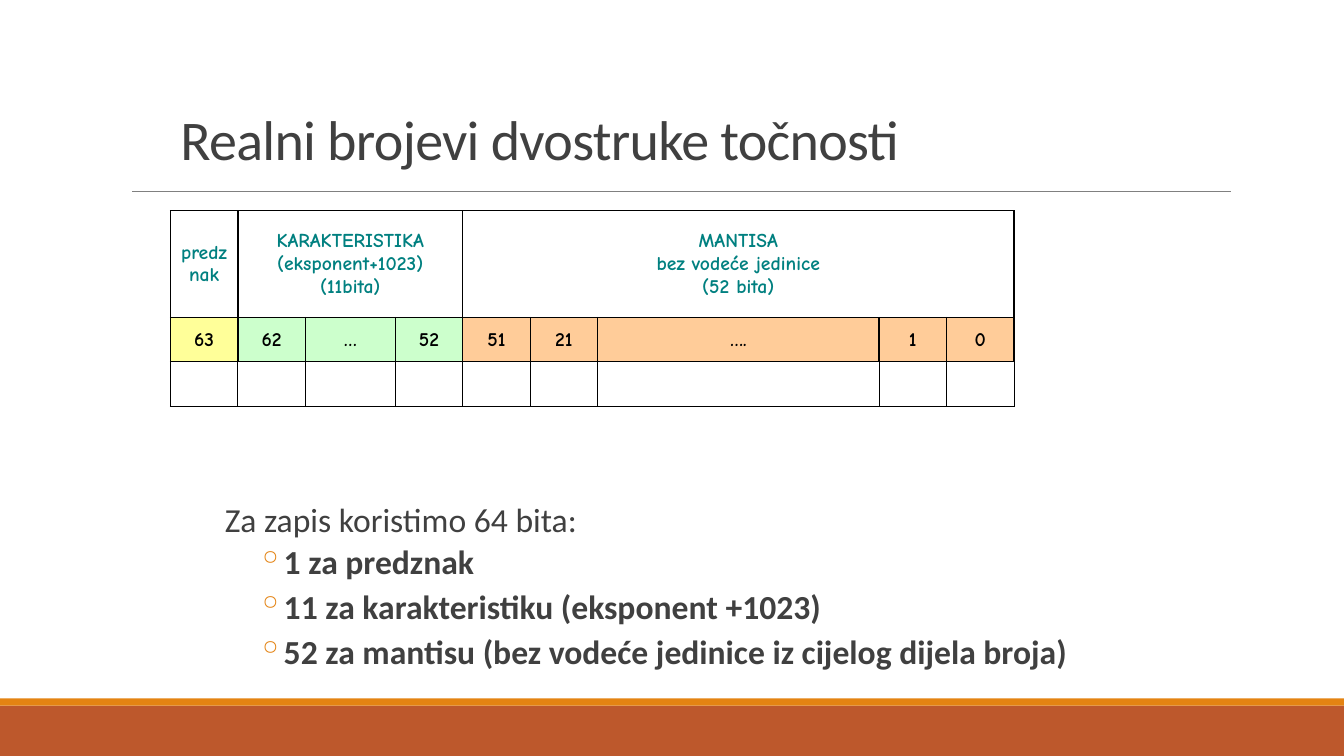
"""Builds a slide on the layout of double precision real numbers."""
from lxml import etree
from pptx import Presentation, util as u
from pptx.dml.color import RGBColor
from pptx.enum import shapes, text
from pptx.oxml import ns

RUST = RGBColor(0xBD, 0x58, 0x2C)
ORANGE = RGBColor(0xE4, 0x83, 0x12)
GRAY = RGBColor(0x80, 0x80, 0x80)
DARK = RGBColor(0x40, 0x40, 0x40)
TEAL = RGBColor(0x00, 0x80, 0x80)
BLACK = RGBColor(0x00, 0x00, 0x00)
YELLOW = RGBColor(0xFF, 0xFF, 0x99)
GREEN = RGBColor(0xCC, 0xFF, 0xCC)
PEACH = RGBColor(0xFF, 0xCC, 0x99)


def style(par, name, size, color, bold=False):
    font = par.font
    font.name, font.size, font.bold = name, u.Pt(size), bold
    font.color.rgb = color


def add(node, tag, **attrs):
    return etree.SubElement(node, ns.qn(tag), attrs)


deck = Presentation()
deck.slide_width, deck.slide_height = u.Inches(13.33), u.Inches(7.5)
slide = deck.slides.add_slide(deck.slide_layouts[5])

for top, high, color in ((7, 0.5, RUST), (6.93, 0.07, ORANGE)):
    band = slide.shapes.add_shape(shapes.MSO_SHAPE.RECTANGLE, 0, u.Inches(top),
                                  deck.slide_width, u.Inches(high))
    band.shadow.inherit = False
    band.fill.solid()
    band.fill.fore_color.rgb = color
    band.line.fill.background()

rule = slide.shapes.add_connector(shapes.MSO_CONNECTOR.STRAIGHT, u.Inches(1.31),
                                  u.Inches(1.9), u.Inches(12.21), u.Inches(1.9))
rule.line.color.rgb, rule.line.width = GRAY, u.Pt(0.5)
add(rule._element.spPr, "a:effectLst")

title = slide.shapes.title
title.left, title.top = u.Inches(1.69), u.Inches(0.51)
title.width, title.height = u.Inches(9.25), u.Inches(1.25)
frame = title.text_frame
frame.text = "Realni brojevi dvostruke točnosti"
frame.auto_size = text.MSO_AUTO_SIZE.NONE
frame.vertical_anchor = text.MSO_ANCHOR.BOTTOM
head = frame.paragraphs[0]
head.alignment, head.line_spacing = text.PP_ALIGN.LEFT, 0.85
style(head, "Calibri", 40, DARK)
head.runs[0]._r.get_or_add_rPr().set("spc", "-50")

box = slide.shapes.add_textbox(u.Inches(2.13), u.Inches(4.95), u.Inches(9.46), u.Inches(2.04))
frame = box.text_frame
frame.word_wrap = True
frame.margin_left = frame.margin_right = 0
lines = ("Za zapis koristimo 64 bita:", "1 za predznak", "11 za karakteristiku (eksponent +1023)",
         "52 za mantisu (bez vodeće jedinice iz cijelog dijela broja)")
frame.text = "\n".join(lines)
for i, par in enumerate(frame.paragraphs):
    style(par, "Calibri", 24, DARK, i > 0)
    par.line_spacing = 0.9
    par.space_before, par.space_after = u.Pt(2 if i else 0), u.Pt(4 if i else 2)
    props = par._p.get_or_add_pPr()
    props.set("marL", str(u.Inches(0.62 if i else 0.1)))
    if i:
        par.level = 1
        props.set("indent", str(u.Inches(-0.2)))
        tint = etree.Element(ns.qn("a:buClr"))
        add(tint, "a:srgbClr", val=str(ORANGE))
        mark = etree.Element(ns.qn("a:buChar"), char="◦")
        spot = props.index(props.find(ns.qn("a:defRPr")))
        props.insert(spot, tint)
        props.insert(spot + 1, mark)

unit = 0.67
wide = [unit, unit, 0.89, unit, unit, unit, 2.79, unit, unit]
high = [1.06, 0.44, 0.44]
grid = slide.shapes.add_table(3, 9, u.Inches(1.69), u.Inches(2.09),
                              u.Inches(sum(wide)), u.Inches(sum(high))).table
grid.first_row = grid.horz_banding = False
for col, size in zip(grid.columns, wide):
    col.width = u.Inches(size)
for row, size in zip(grid.rows, high):
    row.height = u.Inches(size)

names = {0: "predznak", 1: "KARAKTERISTIKA\n(eksponent+1023)\n(11bita)",
         4: "MANTISA\nbez vodeće jedinice\n(52 bita)"}
bits = ["63", "62", "…", "52", "51", "21", "….", "1", "0"]
fills = [YELLOW] + [GREEN] * 3 + [PEACH] * 5
for r in range(3):
    for c in range(9):
        cell = grid.cell(r, c)
        cell.text = (names.get(c, ""), bits[c], "")[r]
        cell.vertical_anchor = text.MSO_ANCHOR.MIDDLE
        for par in cell.text_frame.paragraphs:
            par.alignment = text.PP_ALIGN.CENTER
            style(par, "Comic Neue", 14, BLACK if r else TEAL, True)
        for side in "LRTB":
            thick = 0.75 if r == 2 and side != "T" else 1
            edge = add(cell._tc.get_or_add_tcPr(), "a:ln" + side, w=str(u.Pt(thick)))
            add(add(edge, "a:solidFill"), "a:srgbClr", val=str(BLACK))
        if r == 1:
            cell.fill.solid()
            cell.fill.fore_color.rgb = fills[c]
        else:
            cell.fill.background()
grid.cell(0, 1).merge(grid.cell(0, 3))
grid.cell(0, 4).merge(grid.cell(0, 8))

deck.save("out.pptx")
